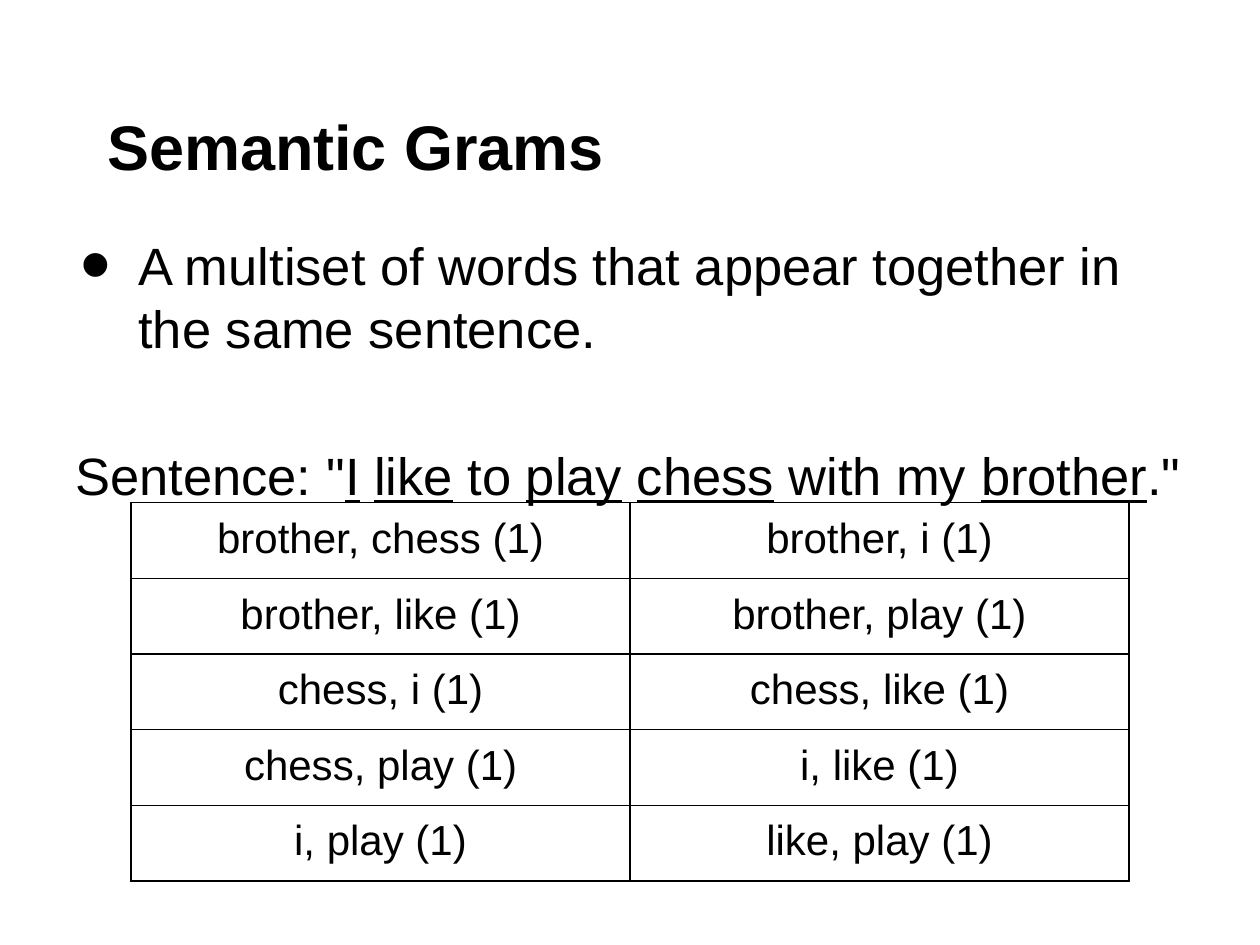
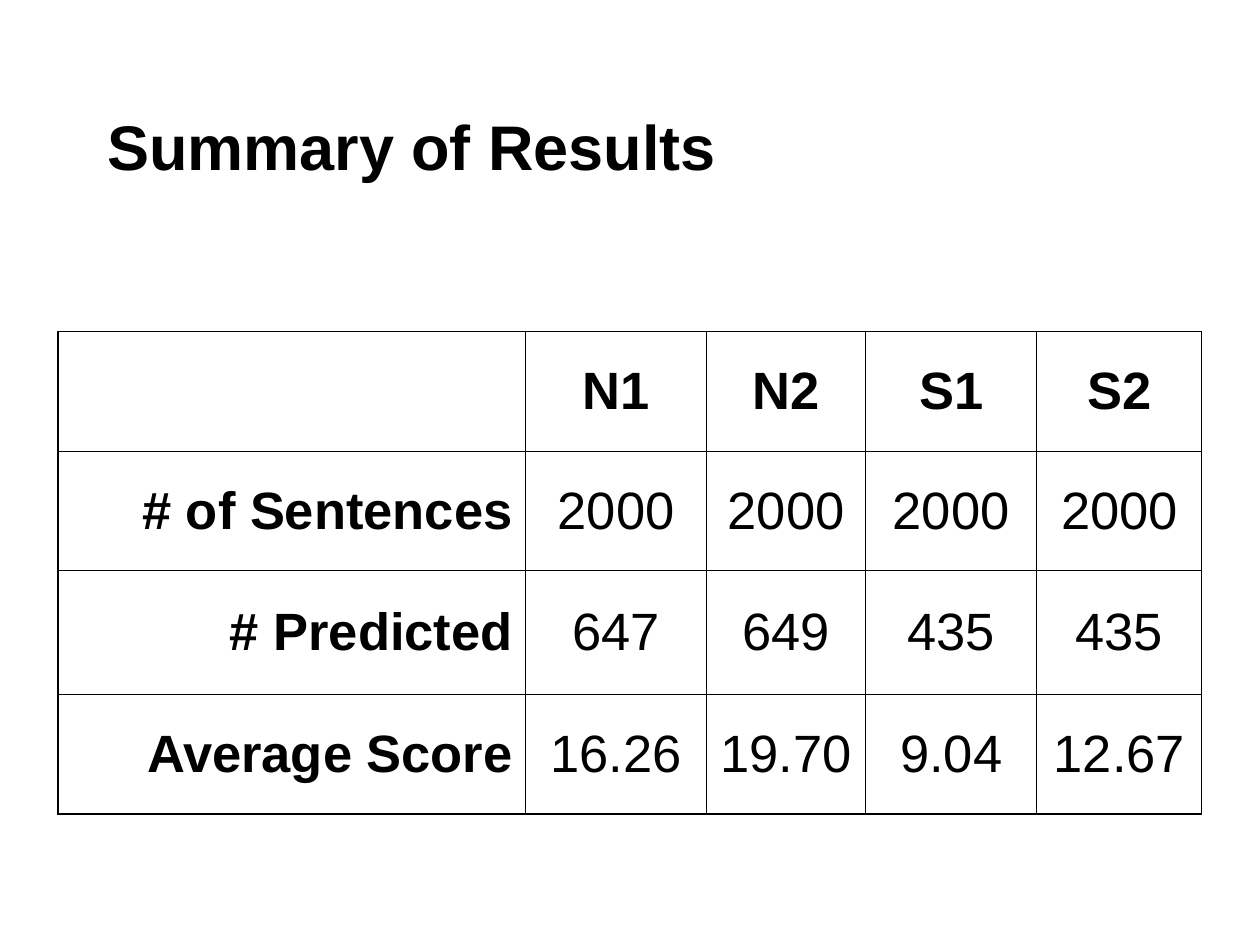
from lxml.etree import SubElement
from pptx import Presentation
from pptx.dml.color import RGBColor
from pptx.enum.text import MSO_ANCHOR, PP_ALIGN
from pptx.oxml.ns import qn
from pptx.util import Inches, Pt

BLACK = RGBColor(0, 0, 0)
WHITE = RGBColor(255, 255, 255)
FONT = "Arial"
INSET = Inches(0.1)
TITLE_BOX = (0.5, 0.3, 9, 1.25)
BODY_BOX = (0.5, 1.75, 9, 5.43)

DEFINITION = "A multiset of words that appear together in the same sentence."
SENTENCE = [
    ('Sentence: "', False), ("I", True), (" ", False), ("like", True),
    (" to ", False), ("play", True), (" ", False), ("chess", True),
    (" with my ", False), ("brother", True), ('."', False),
]
GRAMS = [
    ["brother, chess (1)", "brother, i (1)"],
    ["brother, like (1)", "brother, play (1)"],
    ["chess, i (1)", "chess, like (1)"],
    ["chess, play (1)", "i, like (1)"],
    ["i, play (1)", "like, play (1)"],
]
RESULTS = [
    ["", "N1", "N2", "S1", "S2"],
    ["# of Sentences", "2000", "2000", "2000", "2000"],
    ["# Predicted", "647", "649", "435", "435"],
    ["Average Score", "16.26", "19.70", "9.04", "12.67"],
]


def apply(target, values):
    """Set every attribute named in values on the target."""
    for name, value in values.items():
        setattr(target, name, value)


def add_run(paragraph, text, size, bold=False, underline=False):
    """Append a black run in the deck font."""
    run = paragraph.add_run()
    run.text = text
    apply(run.font, {"name": FONT, "size": Pt(size), "bold": bold, "underline": underline})
    run.font.color.rgb = BLACK


def set_frame(frame, anchor):
    """Give a text frame the shared insets and wrapping."""
    apply(frame, {"margin_left": INSET, "margin_right": INSET, "margin_top": INSET,
                  "margin_bottom": INSET, "word_wrap": True, "vertical_anchor": anchor})


def set_indent(paragraph, margin, first_line):
    """Set the left margin and first-line indent of a paragraph."""
    properties = paragraph._p.get_or_add_pPr()
    properties.set("marL", str(Inches(margin)))
    properties.set("indent", str(Inches(first_line)))
    return properties


def add_titled_slide(deck, title):
    """Add a white title-only slide with the shared title style."""
    slide = deck.slides.add_slide(deck.slide_layouts[5])
    slide.background.fill.solid()
    slide.background.fill.fore_color.rgb = WHITE
    heading = slide.shapes.title
    apply(heading, dict(zip(("left", "top", "width", "height"), map(Inches, TITLE_BOX))))
    set_frame(heading.text_frame, MSO_ANCHOR.BOTTOM)
    line = heading.text_frame.paragraphs[0]
    line.alignment = PP_ALIGN.LEFT
    set_indent(line, 0, 0.25)
    add_run(line, title, 36, bold=True)
    return slide


def add_definition(slide, box):
    """Place the bulleted definition and the example sentence in the box."""
    frame = slide.shapes.add_textbox(*map(Inches, box)).text_frame
    set_frame(frame, MSO_ANCHOR.TOP)
    definition, example = frame.paragraphs[0], frame.add_paragraph()
    definition.line_spacing = example.line_spacing = Pt(36)
    example.space_before = Pt(48)
    properties = set_indent(definition, 0.5, -0.46)
    color = SubElement(properties, qn("a:buClr"))
    SubElement(color, qn("a:srgbClr"), val=str(BLACK))
    SubElement(properties, qn("a:buSzPct"), val="167000")
    SubElement(properties, qn("a:buFont"), typeface=FONT)
    SubElement(properties, qn("a:buChar"), char="•")
    add_run(definition, DEFINITION, 30)
    set_indent(example, 0.38, -0.38)
    for text, underlined in SENTENCE:
        add_run(example, text, 30, underline=underlined)


def outline_cell(cell):
    """Draw thin black borders on all sides and clear the fill."""
    properties = cell._tc.get_or_add_tcPr()
    for side in ("lnL", "lnR", "lnT", "lnB"):
        border = SubElement(properties, qn(f"a:{side}"), w=str(Pt(0.75)))
        fill = SubElement(border, qn("a:solidFill"))
        SubElement(fill, qn("a:srgbClr"), val=str(BLACK))
    cell.fill.background()


def add_grid(slide, origin, widths, heights, rows, size, anchor, headed=False):
    """Add a bordered table, with bold row and column headings if headed."""
    extent = (*origin, sum(widths), sum(heights))
    table = slide.shapes.add_table(len(rows), len(widths), *map(Inches, extent)).table
    apply(table, {"first_row": False, "horz_banding": False})
    for column, width in zip(table.columns, widths):
        column.width = Inches(width)
    for row, height in zip(table.rows, heights):
        row.height = Inches(height)
    for r, values in enumerate(rows):
        for c, value in enumerate(values):
            cell = table.cell(r, c)
            outline_cell(cell)
            apply(cell, {"margin_left": INSET, "margin_right": INSET, "margin_top": INSET,
                         "margin_bottom": INSET, "vertical_anchor": anchor})
            if value:
                line = cell.text_frame.paragraphs[0]
                line.alignment = PP_ALIGN.RIGHT if headed and c == 0 else PP_ALIGN.CENTER
                add_run(line, value, size, bold=headed and (r == 0 or c == 0))


def build_grams_slide(deck):
    """Build the slide that defines semantic grams."""
    slide = add_titled_slide(deck, "Semantic Grams")
    add_definition(slide, BODY_BOX)
    add_grid(slide, (1.04, 3.99), [3.96] * 2, [0.57] * len(GRAMS), GRAMS, 24, MSO_ANCHOR.TOP)


def build_results_slide(deck):
    """Build the slide that summarises the results."""
    slide = add_titled_slide(deck, "Summary of Results")
    add_grid(slide, (0.46, 2.63), [3.71, 1.44, 1.26, 1.36, 1.31], [0.95, 0.95, 0.98, 0.95],
             RESULTS, 30, MSO_ANCHOR.MIDDLE, headed=True)


def main():
    """Build and save the deck."""
    deck = Presentation()
    apply(deck, {"slide_width": Inches(10), "slide_height": Inches(7.5)})
    build_grams_slide(deck)
    build_results_slide(deck)
    deck.save("out.pptx")


if __name__ == "__main__":
    main()
